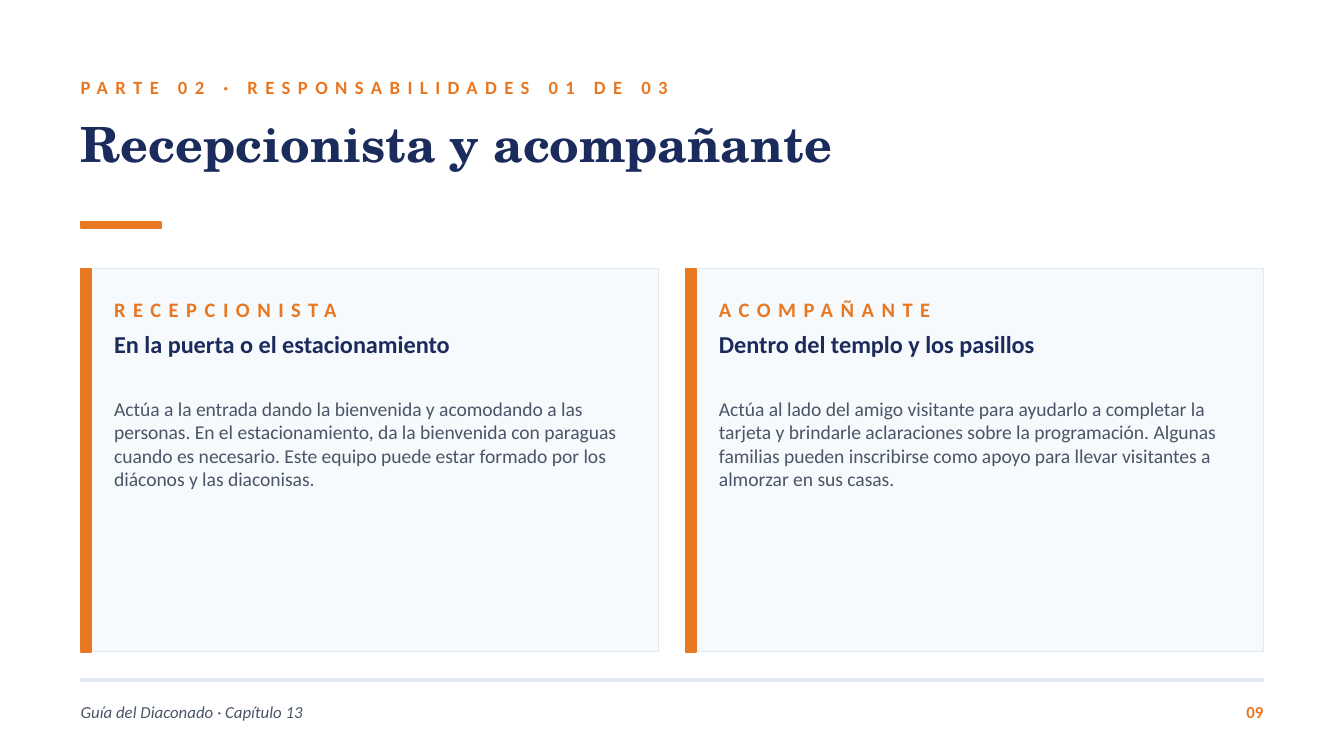
import pptx
import pptx.dml.color
import pptx.enum.shapes
import pptx.enum.text
import pptx.util

Inches = pptx.util.Inches
RGBColor = pptx.dml.color.RGBColor
Anchor = pptx.enum.text.MSO_ANCHOR
Align = pptx.enum.text.PP_ALIGN

ORANGE = RGBColor(0xE8, 0x77, 0x22)
NAVY = RGBColor(0x1A, 0x2B, 0x5C)
SLATE = RGBColor(0x4A, 0x55, 0x68)
MIST = RGBColor(0xF7, 0xFA, 0xFC)
RULE = RGBColor(0xE2, 0xE8, 0xF0)

SLIDE_WIDTH = 10
SLIDE_HEIGHT = SLIDE_WIDTH * 9 / 16
MARGIN = 0.6
CONTENT_WIDTH = SLIDE_WIDTH - 2 * MARGIN
CARD_GAP = 0.2
CARDS = [
    ("RECEPCIONISTA", "En la puerta o el estacionamiento",
     "Actúa a la entrada dando la bienvenida y acomodando a las personas. "
     "En el estacionamiento, da la bienvenida con paraguas cuando es necesario. "
     "Este equipo puede estar formado por los diáconos y las diaconisas."),
    ("ACOMPAÑANTE", "Dentro del templo y los pasillos",
     "Actúa al lado del amigo visitante para ayudarlo a completar la tarjeta y "
     "brindarle aclaraciones sobre la programación. Algunas familias pueden "
     "inscribirse como apoyo para llevar visitantes a almorzar en sus casas."),
]


def add_text(slide, text, left, top, width, height, *, size, color, font="Calibri",
             bold=False, italic=False, tracking=0, anchor=Anchor.TOP, align=Align.LEFT):
    """Place one formatted line or paragraph in a box without insets."""
    box = slide.shapes.add_textbox(Inches(left), Inches(top), Inches(width), Inches(height))
    frame = box.text_frame
    frame.word_wrap = True
    frame.vertical_anchor = anchor
    frame.margin_left = frame.margin_right = frame.margin_top = frame.margin_bottom = 0
    paragraph = frame.paragraphs[0]
    paragraph.alignment = align
    run = paragraph.add_run()
    run.text = text
    run.font.name = font
    run.font.size = pptx.util.Pt(size)
    run.font.bold = bold
    run.font.italic = italic
    run.font.color.rgb = color
    if tracking:
        run._r.get_or_add_rPr().set("spc", str(tracking * 100))


def add_block(slide, left, top, width, height, fill, line=None, line_width=1):
    """Draw a flat rectangle, outlined in its fill colour unless told otherwise."""
    block = slide.shapes.add_shape(
        pptx.enum.shapes.MSO_SHAPE.RECTANGLE,
        Inches(left), Inches(top), Inches(width), Inches(height))
    block.shadow.inherit = False
    block.fill.solid()
    block.fill.fore_color.rgb = fill
    block.line.color.rgb = line or fill
    block.line.width = pptx.util.Pt(line_width)


def add_header(slide, left, top):
    """Place the section label, the title and its accent bar."""
    add_text(slide, "PARTE 02 · RESPONSABILIDADES 01 DE 03", left, top, 7, 0.3,
             size=10, color=ORANGE, bold=True, tracking=4, anchor=Anchor.MIDDLE)
    add_text(slide, "Recepcionista y acompañante", left, top + 0.35, 9, 0.7,
             size=26, color=NAVY, font="TeX Gyre Schola", bold=True)
    add_block(slide, left, top + 1.15, 0.6, 0.05, ORANGE)


def add_card(slide, left, top, width, height, role, place, duties):
    """Draw a role card with an accent edge and three levels of text."""
    add_block(slide, left, top, width, height, MIST, RULE, 0.5)
    add_block(slide, left, top, 0.08, height, ORANGE)
    text_left, text_width = left + 0.25, width - 0.3
    add_text(slide, role, text_left, top + 0.15, text_width, 0.3,
             size=11, color=ORANGE, bold=True, tracking=4, anchor=Anchor.MIDDLE)
    add_text(slide, place, text_left, top + 0.45, text_width, 0.4,
             size=13, color=NAVY, bold=True)
    add_text(slide, duties, text_left, top + 0.95, text_width, height - 1,
             size=10.5, color=SLATE)


def add_footer(slide, left, top, width):
    """Place the rule, the guide name and the page number."""
    add_block(slide, left, top, width, 0.02, RULE)
    add_text(slide, "Guía del Diaconado · Capítulo 13", left, top + 0.1, 6, 0.3,
             size=9, color=SLATE, italic=True, anchor=Anchor.MIDDLE)
    add_text(slide, "09", left + width - 0.5, top + 0.1, 0.5, 0.3, size=9,
             color=ORANGE, bold=True, anchor=Anchor.MIDDLE, align=Align.RIGHT)


def main():
    """Build the slide and save it."""
    deck = pptx.Presentation()
    deck.slide_width, deck.slide_height = Inches(SLIDE_WIDTH), Inches(SLIDE_HEIGHT)
    slide = deck.slides.add_slide(deck.slide_layouts[6])
    add_header(slide, MARGIN, 0.5)
    card_width = (CONTENT_WIDTH - CARD_GAP * (len(CARDS) - 1)) / len(CARDS)
    for column, card in enumerate(CARDS):
        card_left = MARGIN + column * (card_width + CARD_GAP)
        add_card(slide, card_left, 2, card_width, 2.85, *card)
    add_footer(slide, MARGIN, 5.05, CONTENT_WIDTH)
    deck.save("out.pptx")


if __name__ == "__main__":
    main()
